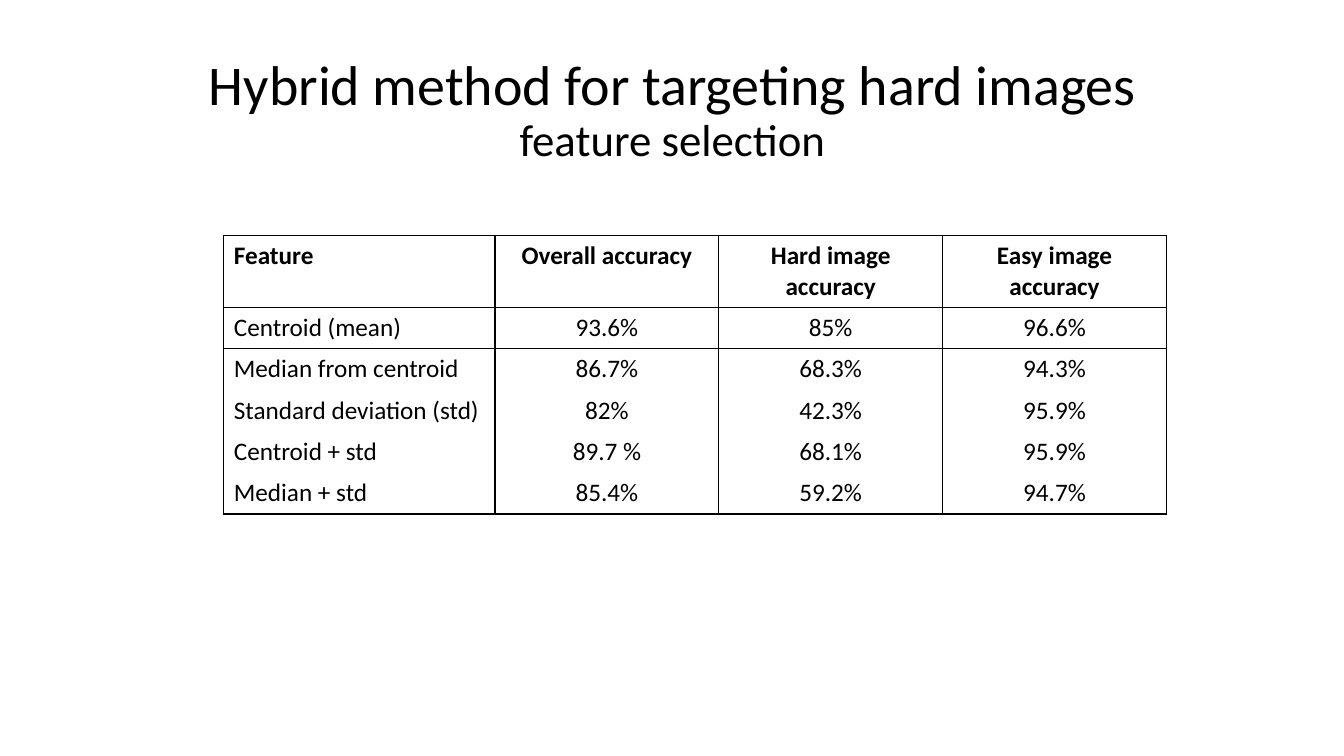
from lxml.etree import SubElement
from pptx import Presentation
from pptx.dml.color import RGBColor
from pptx.enum.text import MSO_ANCHOR, MSO_AUTO_SIZE, PP_ALIGN
from pptx.oxml.ns import qn
from pptx.util import Inches, Pt

BLACK = RGBColor(0x00, 0x00, 0x00)
WHITE = RGBColor(0xFF, 0xFF, 0xFF)
FONT = "Calibri"

ACCURACIES = [
    ("Feature", "Overall accuracy", "Hard image accuracy", "Easy image accuracy"),
    ("Centroid (mean)", "93.6%", "85%", "96.6%"),
    ("Median from centroid", "86.7%", "68.3%", "94.3%"),
    ("Standard deviation (std)", "82%", "42.3%", "95.9%"),
    ("Centroid + std", "89.7 %", "68.1%", "95.9%"),
    ("Median + std", "85.4%", "59.2%", "94.7%"),
]
COLUMN_WIDTHS = (2.69, 2.22, 2.22, 2.22)
ROW_HEIGHT = 0.41
RULED_EDGES = (0, 1, 2, len(ACCURACIES))  # row edges that carry a horizontal line


def add_text(paragraph, text, size=18, bold=False, align=PP_ALIGN.LEFT):
    paragraph.alignment = align
    run = paragraph.add_run()
    run.text = text
    run.font.name = FONT
    run.font.size = Pt(size)
    run.font.bold = bold
    run.font.color.rgb = BLACK


def set_borders(cell, top, bottom):
    """Draw both sides of the cell, and its top and bottom where asked."""
    properties = cell._tc.get_or_add_tcPr()
    edges = {"a:lnL": True, "a:lnR": True, "a:lnT": top, "a:lnB": bottom}
    for position, (tag, visible) in enumerate(edges.items()):
        line = SubElement(properties, qn(tag), w=str(Pt(1)))
        properties.insert(position, line)
        if visible:
            fill = SubElement(line, qn("a:solidFill"))
            SubElement(fill, qn("a:srgbClr"), val=str(BLACK))
        else:
            SubElement(line, qn("a:noFill"))


def add_title(slide):
    title = slide.shapes.title
    title.left, title.top = Inches(0.92), Inches(0.4)
    title.width, title.height = Inches(11.5), Inches(1.41)
    frame = title.text_frame
    frame.auto_size = MSO_AUTO_SIZE.NONE
    frame.vertical_anchor = MSO_ANCHOR.MIDDLE
    paragraph = frame.paragraphs[0]
    paragraph.line_spacing = 0.9
    add_text(paragraph, "Hybrid method for targeting hard images", size=40,
             align=PP_ALIGN.CENTER)
    paragraph.add_line_break()
    add_text(paragraph, "feature selection", size=32, align=PP_ALIGN.CENTER)


def add_accuracy_table(slide):
    row_count = len(ACCURACIES)
    table = slide.shapes.add_table(
        row_count, len(COLUMN_WIDTHS), Inches(2.22), Inches(2.34),
        Inches(sum(COLUMN_WIDTHS)), Inches(ROW_HEIGHT * row_count)).table
    table.first_row = False
    table.horz_banding = False
    for column, width in zip(table.columns, COLUMN_WIDTHS):
        column.width = Inches(width)
    for row_index, values in enumerate(ACCURACIES):
        table.rows[row_index].height = Inches(ROW_HEIGHT)
        for column_index, value in enumerate(values):
            cell = table.cell(row_index, column_index)
            cell.fill.solid()
            cell.fill.fore_color.rgb = WHITE
            add_text(cell.text_frame.paragraphs[0], value, bold=row_index == 0,
                     align=PP_ALIGN.CENTER if column_index else PP_ALIGN.LEFT)
            set_borders(cell, top=row_index in RULED_EDGES,
                        bottom=row_index + 1 in RULED_EDGES)


def main():
    presentation = Presentation()
    presentation.slide_width = Inches(13.33)
    presentation.slide_height = Inches(7.5)
    slide = presentation.slides.add_slide(presentation.slide_layouts[5])
    add_title(slide)
    add_accuracy_table(slide)
    presentation.save("out.pptx")


if __name__ == "__main__":
    main()
